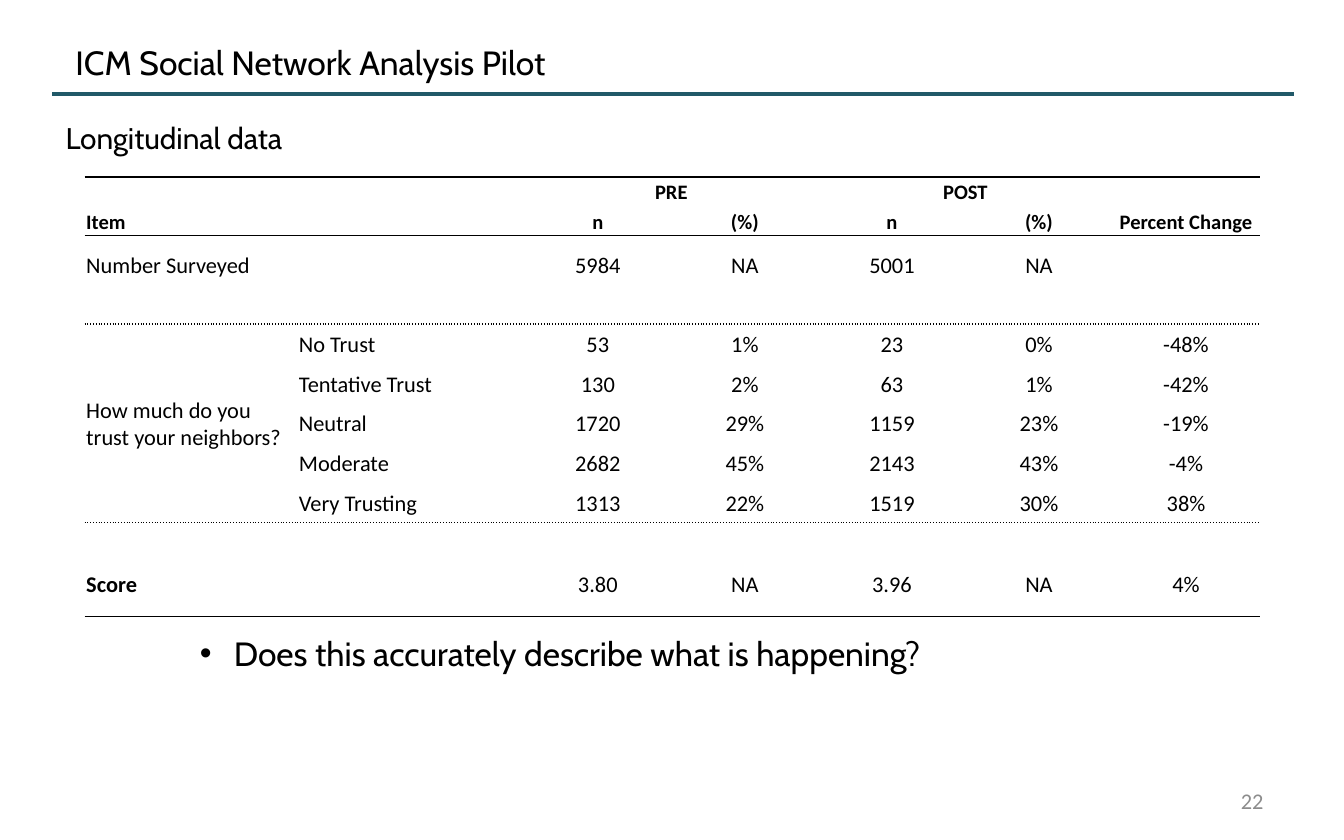
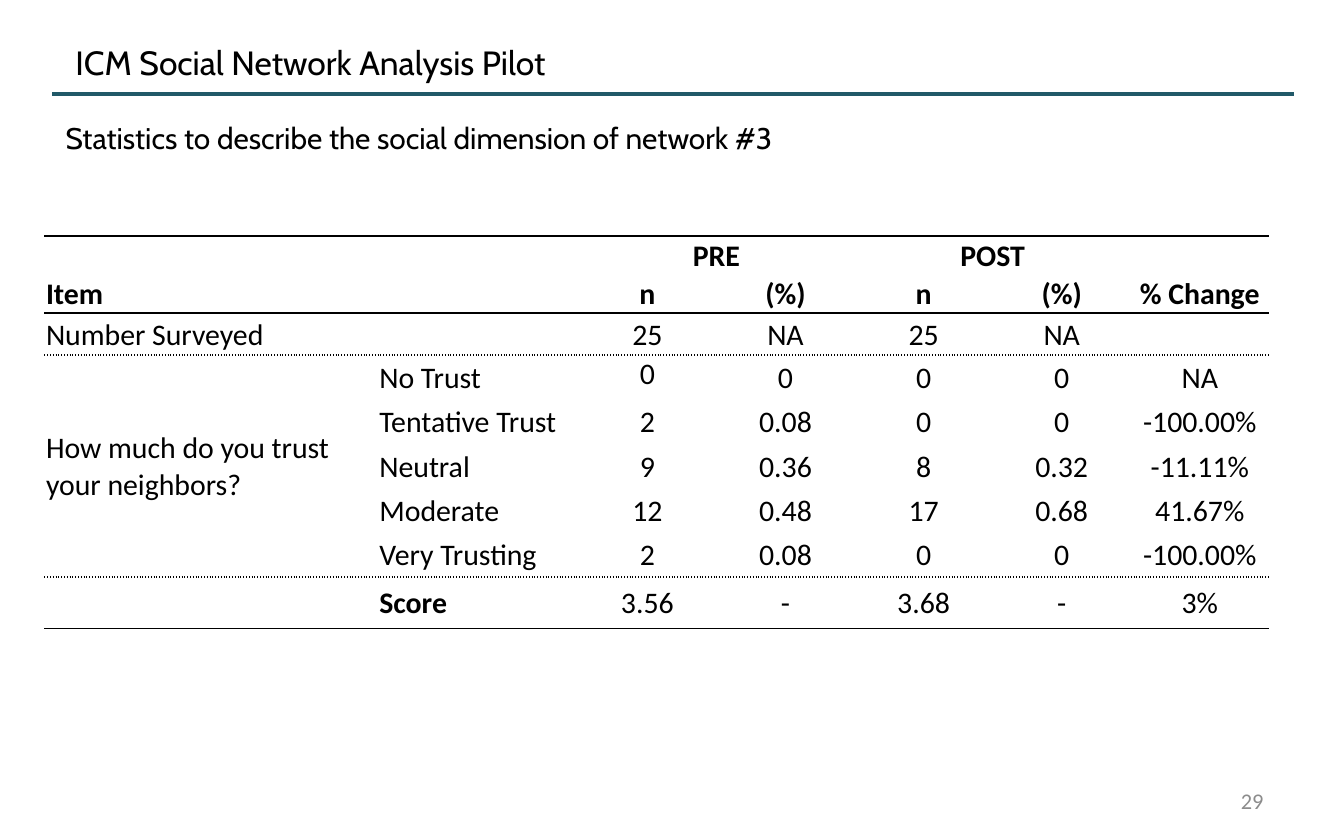
from dataclasses import dataclass

from lxml import etree
from pptx import Presentation
from pptx.dml.color import RGBColor
from pptx.enum.shapes import MSO_CONNECTOR
from pptx.enum.text import MSO_ANCHOR, MSO_AUTO_SIZE, PP_ALIGN
from pptx.oxml.ns import qn
from pptx.slide import Slide
from pptx.table import _Cell
from pptx.util import Cm, Pt

LEFT, MID, RIGHT = PP_ALIGN.LEFT, PP_ALIGN.CENTER, PP_ALIGN.RIGHT
TOP, CENTRE, BASE = MSO_ANCHOR.TOP, MSO_ANCHOR.MIDDLE, MSO_ANCHOR.BOTTOM
STRAIGHT = MSO_CONNECTOR.STRAIGHT
FIXED = MSO_AUTO_SIZE.NONE
SOLID, DOTS = "solid", "sysDot"


@dataclass(frozen=True)
class Theme:
    ink: str = "000000"
    rule: str = "215968"
    grey: str = "8C8C8C"
    head: str = "Cabin"
    body: str = "Calibri"
    title: int = 18
    lead: int = 16
    point: int = 18
    foot: int = 12


@dataclass(frozen=True)
class Box:
    left: float
    top: float
    width: float
    height: float

    def size(self) -> tuple:
        return Cm(self.left), Cm(self.top), Cm(self.width), Cm(self.height)


@dataclass(frozen=True)
class Grid:
    left: float
    top: float
    cols: list[float]
    rows: list[float]
    cells: list[tuple]  # one text for each of SLOTS
    spans: list[tuple]  # first row, first column, last row, last column
    lines: dict[int, str]  # row edge -> dash
    head: int  # type size of the two header rows
    text: int
    perch: MSO_ANCHOR  # anchor of the header rows
    high: tuple = ()  # cells anchored at the top


@dataclass(frozen=True)
class Page:
    lead: str
    number: str
    grid: Grid
    point: str = ""


THEME = Theme()
TITLE = "ICM Social Network Analysis Pilot"
TITLE_BOX = Box(1.17, 0.61, 19.76, 1.14)
LEAD_BOX = Box(0.99, 2.13, 23.47, 0.95)
POINT_BOX = Box(3.53, 11.84, 19, 1.02)
FOOT_BOX = Box(18.21, 14.71, 5.92, 0.84)

# Columns that hold text; column 3 is a gap, column 1 is merged away
SLOTS = (0, 2, 4, 5, 6, 7, 8)
HEAD_SPANS = [(0, 1, 0, 2), (0, 4, 0, 5), (0, 6, 0, 7), (1, 1, 1, 2),
              (2, 0, 2, 2)]
GROUPS = ("", "", "PRE", "", "POST", "", "")
HEADS = ("Item", "", "n", "(%)", "n", "(%)")
ASK = "How much do you trust your neighbors?"

PAGES = [
    Page("Longitudinal data", "22", Grid(
        1.6, 3.35,
        cols=[2.78, 1.24, 3.86, 0.43] + [2.78] * 5,
        rows=[0.53, 0.57, 1.14, 0.53] + [0.75] * 5 + [0.53, 1.24],
        cells=[
            GROUPS,
            (*HEADS, "Percent Change"),
            ("Number Surveyed", "", "5984", "NA", "5001", "NA", ""),
            ("",) * 7,
            (ASK, "No Trust", "53", "1%", "23", "0%", "-48%"),
            ("", "Tentative Trust", "130", "2%", "63", "1%", "-42%"),
            ("", "Neutral", "1720", "29%", "1159", "23%", "-19%"),
            ("", "Moderate", "2682", "45%", "2143", "43%", "-4%"),
            ("", "Very Trusting", "1313", "22%", "1519", "30%", "38%"),
            ("",) * 7,
            ("Score", "", "3.80", "NA", "3.96", "NA", "4%"),
        ],
        spans=HEAD_SPANS + [(3, 0, 3, 1), (4, 0, 8, 1), (9, 0, 9, 2),
                            (10, 0, 10, 2)],
        lines={0: SOLID, 2: SOLID, 4: DOTS, 9: DOTS, 11: SOLID},
        head=11, text=12, perch=BASE,
    ), "Does this accurately describe what is happening?"),
    Page("Statistics to describe the social dimension of network #3", "29", Grid(
        0.84, 4.46,
        cols=[2.9, 3.4, 3.63, 0.15] + [2.61] * 5,
        rows=[0.73, 0.73, 0.79] + [0.84] * 5 + [0.97],
        cells=[
            GROUPS,
            (*HEADS, "% Change"),
            ("Number Surveyed", "", "25", "NA", "25", "NA", ""),
            (ASK, "No Trust", "0", "0", "0", "0", "NA"),
            ("", "Tentative Trust", "2", "0.08", "0", "0", "-100.00%"),
            ("", "Neutral", "9", "0.36", "8", "0.32", "-11.11%"),
            ("", "Moderate", "12", "0.48", "17", "0.68", "41.67%"),
            ("", "Very Trusting", "2", "0.08", "0", "0", "-100.00%"),
            ("", "Score", "3.56", "-", "3.68", "-", "3%"),
        ],
        spans=HEAD_SPANS + [(3, 0, 7, 1), (8, 0, 8, 1)],
        lines={0: SOLID, 2: SOLID, 3: DOTS, 8: DOTS, 9: SOLID},
        head=16, text=16, perch=CENTRE, high=((3, 4),),
    )),
]


def style(para, size: int, face: str, tint: str, align=LEFT, bold=False) -> None:
    para.alignment = align
    font = para.font
    font.size, font.name, font.bold = Pt(size), face, bold
    font.color.rgb = RGBColor.from_string(tint)


def write(slide: Slide, box: Box, text: str, size: int, face: str = THEME.head,
          tint: str = THEME.ink, align=LEFT, anchor=TOP, bullet=False) -> None:
    frame = slide.shapes.add_textbox(*box.size()).text_frame
    frame.word_wrap = True
    frame.vertical_anchor = anchor
    para = frame.paragraphs[0]
    para.text = text
    if bullet:
        props = para._p.get_or_add_pPr()
        props.set("marL", str(Cm(0.64)))
        props.set("indent", str(-Cm(0.64)))
        etree.SubElement(props, qn("a:buFont"), typeface="Arial")
        etree.SubElement(props, qn("a:buChar"), char="•")
    style(para, size, face, tint, align)


def edge(cell: _Cell, side: str, dash: str | None) -> None:
    props = cell._tc.get_or_add_tcPr()
    line = etree.SubElement(props, qn(f"a:{side}"), w=str(Pt(1)))
    if dash is None:
        etree.SubElement(line, qn("a:noFill"))
        return
    fill = etree.SubElement(line, qn("a:solidFill"))
    etree.SubElement(fill, qn("a:srgbClr"), val=THEME.ink)
    etree.SubElement(line, qn("a:prstDash"), val=dash)


def draw_cell(cell: _Cell, grid: Grid, row: int, col: int) -> None:
    text = grid.cells[row][SLOTS.index(col)] if col in SLOTS else ""
    head = row < 2
    size = grid.head if head else grid.text
    cell.margin_left = cell.margin_right = cell.margin_top = Cm(0.03)
    cell.margin_bottom = 0
    cell.vertical_anchor = grid.perch if head else CENTRE
    if (row, col) in grid.high:
        cell.vertical_anchor = TOP

    para = cell.text_frame.paragraphs[0]
    if text:
        para.text = text
    else:  # keeps empty cells from stretching their row
        etree.SubElement(para._p, qn("a:endParaRPr"), sz=str(size * 100))
    style(para, size, THEME.body, THEME.ink, MID if col > 3 else LEFT,
          head or text == "Score")

    end = row + (cell.span_height if cell.is_merge_origin else 1)
    edge(cell, "lnL", None)
    edge(cell, "lnR", None)
    edge(cell, "lnT", grid.lines.get(row))
    edge(cell, "lnB", grid.lines.get(end))
    cell.fill.background()


def draw_grid(slide: Slide, grid: Grid) -> None:
    box = Box(grid.left, grid.top, sum(grid.cols), sum(grid.rows))
    table = slide.shapes.add_table(
        len(grid.rows), len(grid.cols), *box.size()).table
    table.first_row = table.horz_banding = False
    for col, width in zip(table.columns, grid.cols):
        col.width = Cm(width)
    for row, height in zip(table.rows, grid.rows):
        row.height = Cm(height)
    for top, left, low, right in grid.spans:
        table.cell(top, left).merge(table.cell(low, right))
    for row in range(len(grid.rows)):
        for col in range(len(grid.cols)):
            draw_cell(table.cell(row, col), grid, row, col)


def draw_frame(slide: Slide, number: str) -> None:
    # Title
    title = slide.shapes.title
    title.left, title.top, title.width, title.height = TITLE_BOX.size()
    frame = title.text_frame
    frame.text = TITLE
    frame.auto_size = FIXED
    frame.vertical_anchor = CENTRE
    style(frame.paragraphs[0], THEME.title, THEME.head, THEME.ink)

    # Rule under the title
    rule = slide.shapes.add_connector(
        STRAIGHT, Cm(0.99), Cm(1.78), Cm(24.46), Cm(1.78))
    rule.line.color.rgb = RGBColor.from_string(THEME.rule)
    rule.line.width = Pt(2)
    etree.SubElement(rule._element.spPr, qn("a:effectLst"))

    # Page number
    write(slide, FOOT_BOX, number, THEME.foot, THEME.body, THEME.grey,
          RIGHT, CENTRE)


def main() -> None:
    deck = Presentation()
    deck.slide_width, deck.slide_height = Cm(25.4), Cm(15.88)
    for page in PAGES:
        slide = deck.slides.add_slide(deck.slide_layouts[5])
        draw_frame(slide, page.number)
        write(slide, LEAD_BOX, page.lead, THEME.lead)
        draw_grid(slide, page.grid)
        if page.point:
            write(slide, POINT_BOX, page.point, THEME.point, bullet=True)
    deck.save("out.pptx")


if __name__ == "__main__":
    main()
